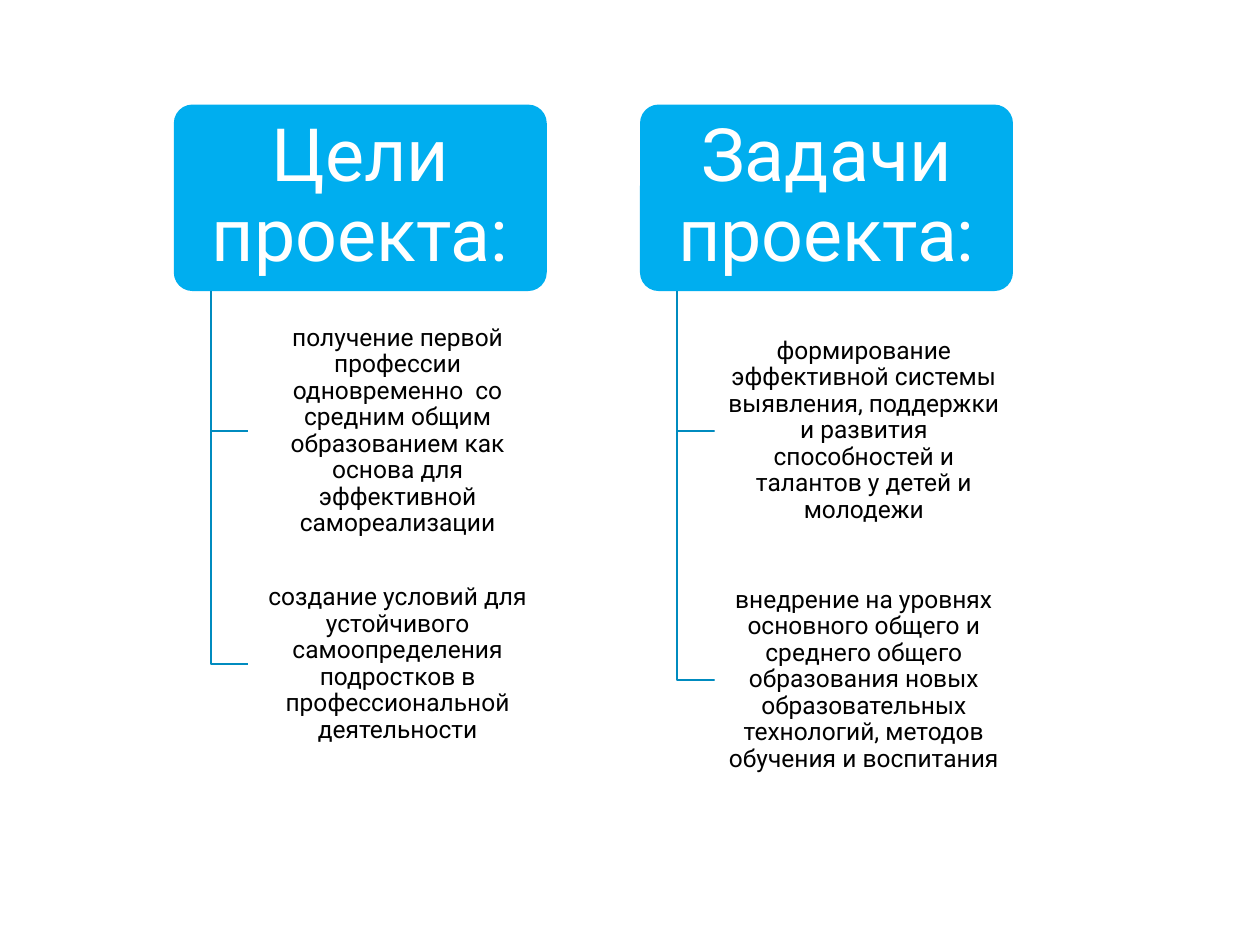
from dataclasses import dataclass

from lxml.etree import SubElement
from pptx import Presentation
from pptx.dml.color import RGBColor
from pptx.enum.shapes import MSO_SHAPE as Preset
from pptx.enum.text import MSO_ANCHOR as Anchor, PP_ALIGN as Align
from pptx.oxml.ns import qn
from pptx.util import Inches, Pt


@dataclass(frozen=True)
class Theme:
    font: str = "Roboto"
    accent: str = "00AEEF"
    branch: str = "008BBF"
    paper: str = "FFFFFF"
    ink: str = "000000"
    heading_size: int = 42
    item_size: int = 14
    branch_width: int = 1


# Grid: square cells counted from the top left corner of the diagram
CELL, LEFT, TOP = 0.37, 1.38, 0.83
HEAD_WIDTH, HEAD_HEIGHT = 8, 4
COLUMN_STEP, ROW_STEP = 10, 5
TRUNK, INDENT = 0.8, 1.6

GROUPS = [
    ("Цели проекта:", [
        ("получение первой профессии одновременно  со средним общим "
         "образованием как основа для эффективной самореализации", 4),
        ("создание условий для устойчивого самоопределения подростков "
         "в профессиональной деятельности", 4),
    ]),
    ("Задачи проекта:", [
        ("формирование эффективной системы выявления, поддержки и развития "
         "способностей и талантов у детей и молодежи", 4),
        ("внедрение на уровнях основного общего и среднего общего образования "
         "новых образовательных технологий, методов обучения и воспитания", 4.68),
    ]),
]


def apply(target, values):
    for name, value in values.items():
        setattr(target, name, value)


class Diagram:
    def __init__(self, slide, theme):
        self.shapes, self.theme = slide.shapes, theme

    def point(self, column, row):
        return Inches(LEFT + column * CELL), Inches(TOP + row * CELL)

    def box(self, column, row, width, height):
        return *self.point(column, row), Inches(width * CELL), Inches(height * CELL)

    def plate(self, area, color, opacity=100):
        card = self.shapes.add_shape(Preset.ROUNDED_RECTANGLE, *self.box(*area))
        card.adjustments[0] = 0.1
        card.shadow.inherit = False
        card.fill.solid()
        card.fill.fore_color.rgb = RGBColor.from_string(color)
        card.line.fill.background()
        if opacity < 100:
            tint = card.fill._xPr.find(".//" + qn("a:srgbClr"))
            SubElement(tint, qn("a:alpha"), val=str(opacity * 1000))

    def caption(self, area, wording, size, color, inset):
        frame = self.shapes.add_textbox(*self.box(*area)).text_frame
        side, edge = map(Inches, inset)
        apply(frame, {"word_wrap": True, "vertical_anchor": Anchor.MIDDLE,
                      "margin_left": side, "margin_right": side,
                      "margin_top": edge, "margin_bottom": edge})
        paragraph = frame.paragraphs[0]
        apply(paragraph, {"text": wording, "alignment": Align.CENTER,
                          "line_spacing": 0.9})
        font = paragraph.runs[0].font
        apply(font, {"name": self.theme.font, "size": Pt(size)})
        font.color.rgb = RGBColor.from_string(color)

    def branch(self, column, middle):
        """Draw an elbow from the heading down and across to an item."""
        builder = self.shapes.build_freeform(*self.point(column + TRUNK, HEAD_HEIGHT))
        builder.add_line_segments([self.point(column + TRUNK, middle),
                                   self.point(column + INDENT, middle)], close=False)
        elbow = builder.convert_to_shape()
        elbow.shadow.inherit = False
        elbow.fill.background()
        elbow.line.color.rgb = RGBColor.from_string(self.theme.branch)
        elbow.line.width = Pt(self.theme.branch_width)

    def heading(self, column, wording):
        area = column, 0, HEAD_WIDTH, HEAD_HEIGHT
        self.plate(area, self.theme.accent)
        self.caption(area, wording, self.theme.heading_size, self.theme.paper,
                     (0.09, 0.06))

    def item(self, column, row, height, wording):
        area = column + INDENT, row, HEAD_WIDTH - INDENT, height
        self.branch(column, row + height / 2)
        self.plate(area, self.theme.paper, opacity=90)
        self.caption(area, wording, self.theme.item_size, self.theme.ink,
                     (0.03, 0.02))


def main():
    deck = Presentation()
    deck.slide_width, deck.slide_height = Inches(10), Inches(7.5)
    diagram = Diagram(deck.slides.add_slide(deck.slide_layouts[6]), Theme())
    for index, (title, items) in enumerate(GROUPS):
        column = index * COLUMN_STEP
        diagram.heading(column, title)
        for order, (wording, height) in enumerate(items, start=1):
            diagram.item(column, order * ROW_STEP, height, wording)
    deck.save("out.pptx")


if __name__ == "__main__":
    main()
